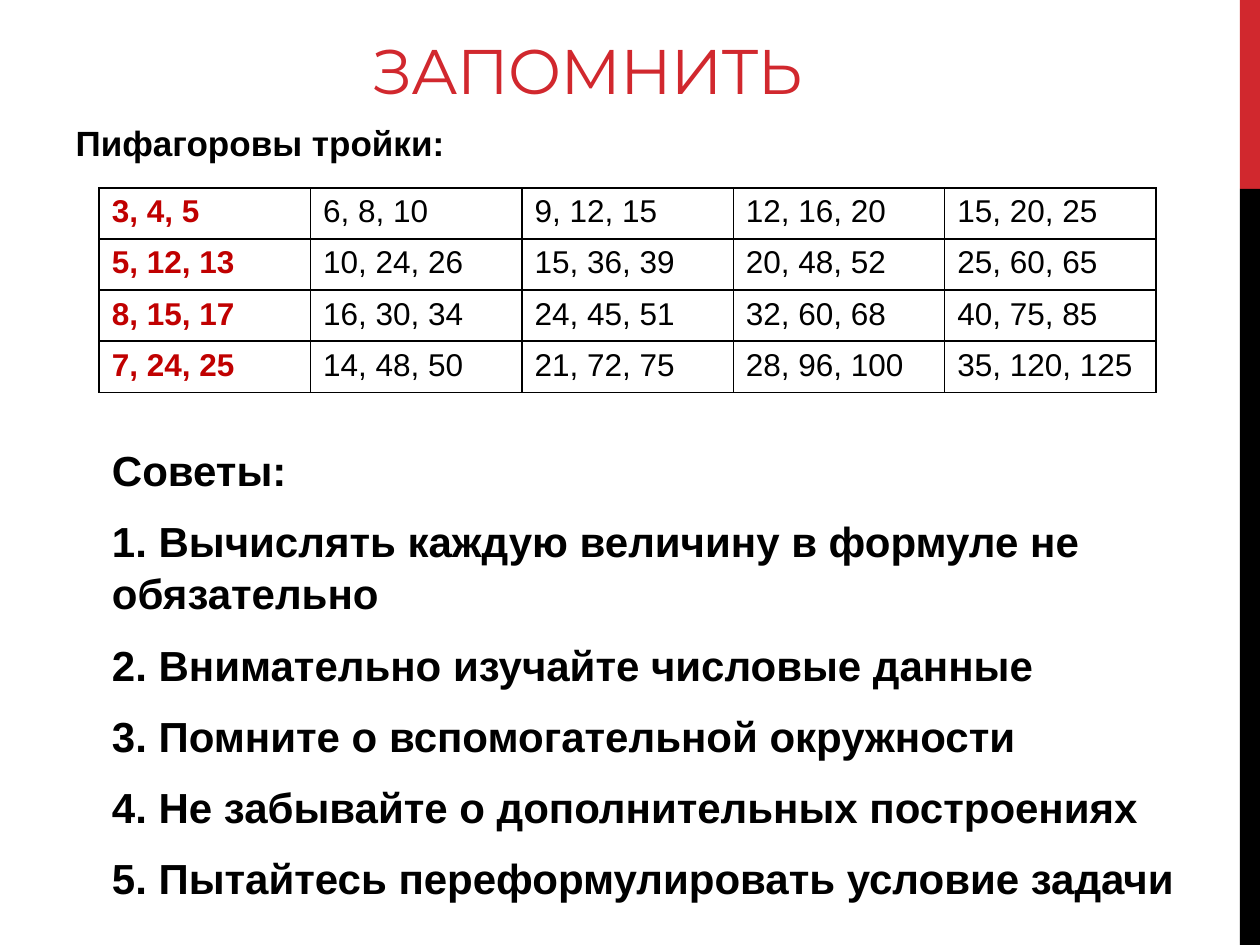
from lxml.etree import SubElement
from pptx import Presentation
from pptx.dml.color import RGBColor
from pptx.enum.shapes import MSO_SHAPE
from pptx.enum.text import MSO_ANCHOR as ANCHOR, MSO_AUTO_SIZE as AUTO, PP_ALIGN as ALIGN
from pptx.oxml.ns import qn
from pptx.util import Pt

RED = RGBColor(0xD1, 0x28, 0x2E)
DARK_RED = RGBColor(0xC0, 0x00, 0x00)
BLACK = RGBColor(0, 0, 0)

# Content
TITLE = "ЗАПОМНИТЬ"
HEADING = "Пифагоровы тройки:"
TRIPLES = [
    ["3, 4, 5", "6, 8, 10", "9, 12, 15", "12, 16, 20", "15, 20, 25"],
    ["5, 12, 13", "10, 24, 26", "15, 36, 39", "20, 48, 52", "25, 60, 65"],
    ["8, 15, 17", "16, 30, 34", "24, 45, 51", "32, 60, 68", "40, 75, 85"],
    ["7, 24, 25", "14, 48, 50", "21, 72, 75", "28, 96, 100", "35, 120, 125"],
]
ADVICE = [
    "Советы:",
    "1. Вычислять каждую величину в формуле не обязательно",
    "2. Внимательно изучайте числовые данные",
    "3. Помните о вспомогательной окружности",
    "4. Не забывайте о дополнительных построениях",
    "5. Пытайтесь переформулировать условие задачи",
]
BARS = [(0, 108, RED), (108, 432, BLACK)]  # top, height, colour


def write(p, text, size, color=BLACK, bold=False, font="Arial", align=ALIGN.LEFT,
          before=0, after=0, line=None, spacing=None):
    p.alignment = align
    p.space_before, p.space_after = Pt(before), Pt(after)
    p.line_spacing = line
    r = p.add_run()
    r.text = text
    r.font.size, r.font.bold, r.font.name = Pt(size), bold, font
    r.font.color.rgb = color
    if spacing is not None:
        r.font._element.set("spc", str(round(spacing * 100)))


def place(sp, left, top, width, height, anchor=ANCHOR.TOP):
    sp.left, sp.top, sp.width, sp.height = Pt(left), Pt(top), Pt(width), Pt(height)
    tf = sp.text_frame
    tf.word_wrap, tf.auto_size, tf.vertical_anchor = True, AUTO.NONE, anchor
    return tf


def add_borders(cell):
    tcPr = cell._tc.get_or_add_tcPr()
    for i, side in enumerate(("a:lnL", "a:lnR", "a:lnT", "a:lnB")):
        ln = tcPr.makeelement(qn(side), {"w": str(Pt(1))})
        fill = SubElement(ln, qn("a:solidFill"))
        SubElement(fill, qn("a:srgbClr"), val=str(BLACK))
        tcPr.insert(i, ln)


prs = Presentation()
prs.slide_width, prs.slide_height = Pt(720), Pt(540)
s = prs.slides.add_slide(prs.slide_layouts[1])

# Side bars
for top, height, color in BARS:
    bar = s.shapes.add_shape(MSO_SHAPE.RECTANGLE, Pt(708.5), Pt(top), Pt(11.5), Pt(height))
    bar.shadow.inherit = False
    bar.fill.solid()
    bar.fill.fore_color.rgb = color
    bar.line.fill.background()

# Title
tf = place(s.shapes.title, 139.7, 9.4, 391.7, 55.4, ANCHOR.BOTTOM)
write(tf.paragraphs[0], TITLE, 36, RED, font="Montserrat", align=ALIGN.CENTER, spacing=-0.6)

# Heading above the table, without a bullet
tf = place(s.placeholders[1], 36, 64.8, 599.8, 56.2)
p = tf.paragraphs[0]
write(p, HEADING, 20, bold=True, before=4, after=6, line=1.04)
pPr = p._p.get_or_add_pPr()
pPr.set("marL", "0")
pPr.set("indent", "0")
SubElement(pPr, qn("a:buNone"))

# Advice
tf = place(s.shapes.add_textbox(0, 0, 0, 0), 56.9, 249.1, 661, 275.8)
for i, text in enumerate(ADVICE):
    p = tf.add_paragraph() if i else tf.paragraphs[0]
    write(p, text, 24, bold=True, before=4.8, after=6, line=1.04)

# Table of triples: the first column holds the primitive ones
rows, cols = len(TRIPLES), len(TRIPLES[0])
table = s.shapes.add_table(rows, cols, Pt(56.7), Pt(107.4), Pt(604), Pt(116.8)).table
table.first_row = table.horz_banding = False
for i, row in enumerate(TRIPLES):
    for j, text in enumerate(row):
        cell = table.cell(i, j)
        cell.fill.background()
        add_borders(cell)
        first = j == 0
        write(cell.text_frame.paragraphs[0], text, 18, DARK_RED if first else BLACK, bold=first)

prs.save("out.pptx")
